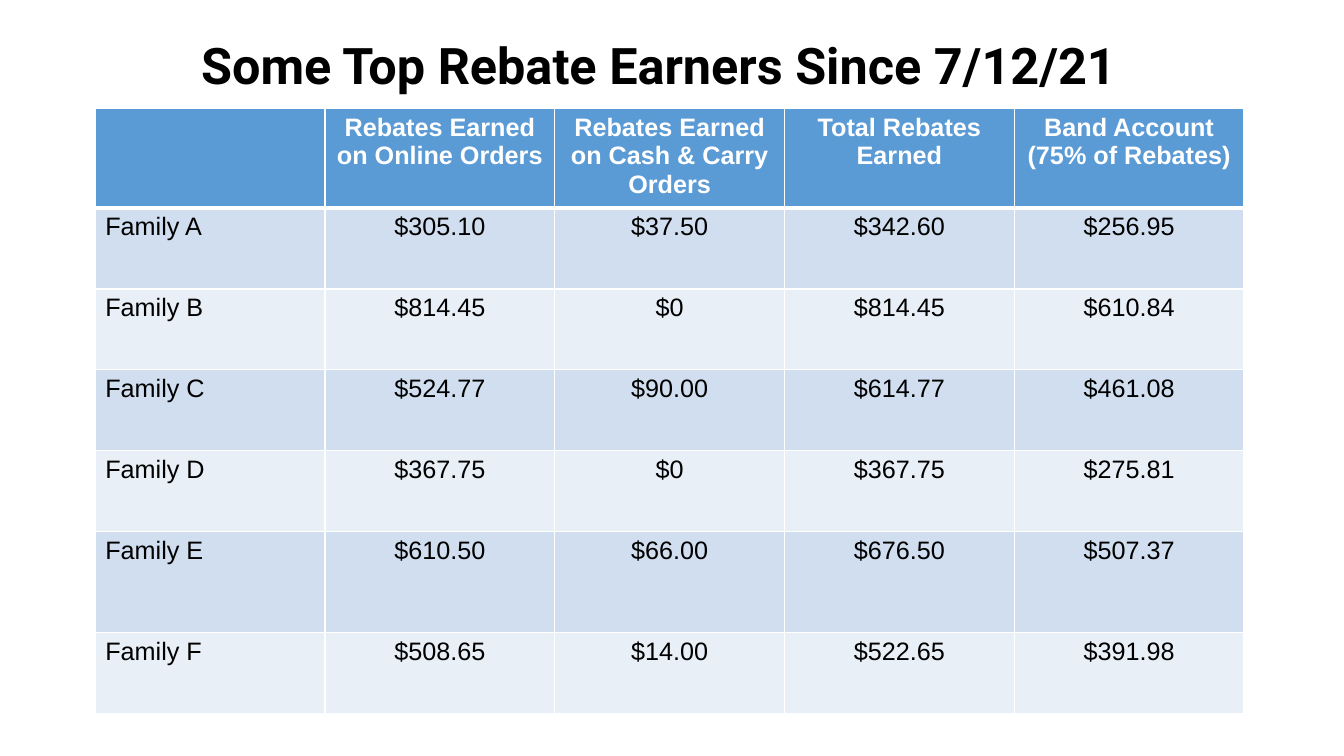
from lxml.etree import SubElement
from pptx import Presentation
from pptx.dml.color import RGBColor
from pptx.enum.text import MSO_ANCHOR, MSO_AUTO_SIZE, PP_ALIGN
from pptx.oxml.ns import qn
from pptx.util import Cm, Pt

WHITE, BLACK = "FFFFFF", "000000"
HEADER_FILL = "5B9BD5"
BAND_FILLS = ("D0DEEF", "E9EFF7")

HEADERS = (
    "",
    "Rebates Earned on Online Orders",
    "Rebates Earned on Cash & Carry Orders",
    "Total Rebates Earned",
    "Band Account\n(75% of Rebates)",
)
FAMILIES = (
    ("Family A", "$305.10", "$37.50", "$342.60", "$256.95"),
    ("Family B", "$814.45", "$0", "$814.45", "$610.84"),
    ("Family C", "$524.77", "$90.00", "$614.77", "$461.08"),
    ("Family D", "$367.75", "$0", "$367.75", "$275.81"),
    ("Family E", "$610.50", "$66.00", "$676.50", "$507.37"),
    ("Family F", "$508.65", "$14.00", "$522.65", "$391.98"),
)
ROW_HEIGHTS = (2.5, 2.04, 2.04, 2.04, 2.04, 2.54, 2.04)


def color(hex_string):
    return RGBColor.from_string(hex_string)


def format_text(text_frame, font_name, size, text_color, bold, alignment):
    for paragraph in text_frame.paragraphs:
        paragraph.alignment = alignment
        for span in paragraph.runs:
            span.font.name = font_name
            span.font.size = Pt(size)
            span.font.bold = bold
            span.font.color.rgb = color(text_color)


def set_borders(cell, top, bottom):
    """Draw white cell borders; top and bottom widths are in points."""
    properties = cell._tc.get_or_add_tcPr()
    for side, width in (("L", 1), ("R", 1), ("T", top), ("B", bottom)):
        line = SubElement(properties, qn(f"a:ln{side}"), w=str(Pt(width)))
        fill = SubElement(line, qn("a:solidFill"))
        SubElement(fill, qn("a:srgbClr"), val=WHITE)


def add_title(page, left, top, width, height):
    title = page.shapes.title
    title.left, title.top, title.width, title.height = left, top, width, height
    frame = title.text_frame
    frame.text = "Some Top Rebate Earners Since 7/12/21"
    frame.word_wrap = True
    frame.auto_size = MSO_AUTO_SIZE.NONE
    frame.vertical_anchor = MSO_ANCHOR.MIDDLE
    format_text(frame, "Roboto", 36, BLACK, True, PP_ALIGN.CENTER)


def add_rebate_table(page, left, top, width, height):
    rows = (HEADERS, *FAMILIES)
    table = page.shapes.add_table(
        len(rows), len(HEADERS), left, top, width, height
    ).table
    for row, row_height in zip(table.rows, ROW_HEIGHTS):
        row.height = Cm(row_height)
    for row_index, values in enumerate(rows):
        is_header = row_index == 0
        fill = HEADER_FILL if is_header else BAND_FILLS[(row_index - 1) % 2]
        for column_index, value in enumerate(values):
            cell = table.cell(row_index, column_index)
            cell.text_frame.text = value
            is_name = column_index == 0
            format_text(
                cell.text_frame, "Arial", 18,
                WHITE if is_header else BLACK, is_header,
                PP_ALIGN.LEFT if is_name else PP_ALIGN.CENTER,
            )
            set_borders(cell, 3 if row_index == 1 else 1, 3 if is_header else 1)
            cell.fill.solid()
            cell.fill.fore_color.rgb = color(fill)


def main():
    deck = Presentation()
    deck.slide_width, deck.slide_height = Cm(33.87), Cm(19.05)
    page = deck.slides.add_slide(deck.slide_layouts.get_by_name("Title Only"))
    add_title(page, Cm(2.18), Cm(0.71), Cm(28.85), Cm(1.8))
    add_rebate_table(page, Cm(2.4), Cm(2.74), Cm(28.95), Cm(sum(ROW_HEIGHTS)))
    deck.save("out.pptx")


if __name__ == "__main__":
    main()
